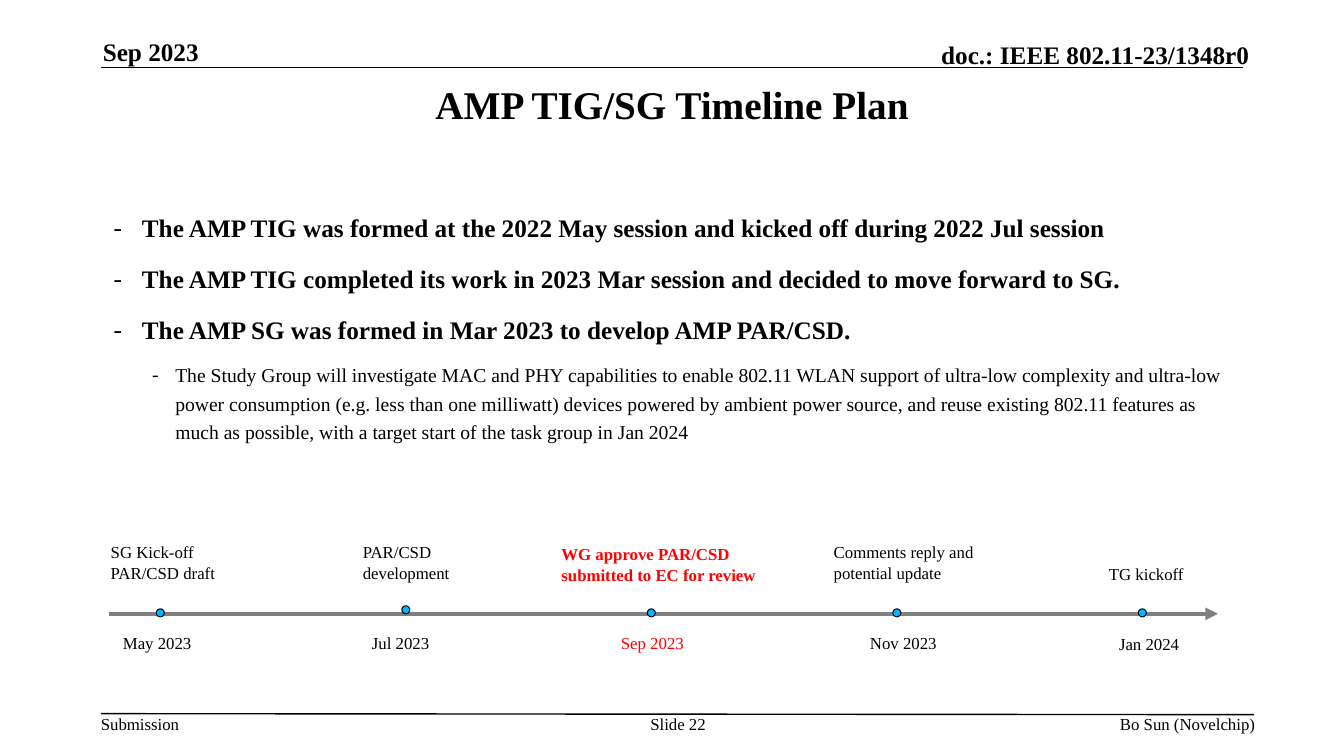
from dataclasses import dataclass

from lxml.etree import SubElement
from pptx import Presentation
from pptx.dml.color import RGBColor
from pptx.enum.shapes import MSO_CONNECTOR, MSO_SHAPE
from pptx.enum.text import MSO_ANCHOR, PP_ALIGN
from pptx.oxml.ns import qn
from pptx.text.text import _Paragraph
from pptx.util import Inches, Pt

FONT = "Times New Roman"
BLACK, RED, GREY, BLUE = "000000", "FF0000", "808080", "00B8FF"

Box = tuple[float, float, float, float]
Point = tuple[float, float]


@dataclass
class Milestone:
    date: str
    label: str
    label_box: Box
    date_top: float = 6.23
    dot_top: float = 6.04
    color: str = BLACK
    bold: bool = False


@dataclass
class Bullet:
    text: str
    level: int = 0


@dataclass
class BulletStyle:
    size: float
    bold: bool
    indent: float
    hanging: float
    space_before: float


MILESTONES = [
    Milestone("May 2023", "SG Kick-off\nPAR/CSD draft", (1, 5.33, 1.44, 0.5)),
    Milestone("Jul 2023", "PAR/CSD development", (3.5, 5.33, 1.08, 0.5), dot_top=6.01),
    Milestone("Sep 2023", "WG approve PAR/CSD submitted to EC for review",
              (5.47, 5.35, 2.18, 0.5), color=RED, bold=True),
    Milestone("Nov 2023", "Comments reply and potential update", (8.17, 5.33, 1.65, 0.5)),
    Milestone("Jan 2024", "TG kickoff", (10.9, 5.54, 1.08, 0.3), date_top=6.24),
]
FIRST_DATE, DATE_STEP = 1.12, 2.47
FIRST_DOT, DOT_STEP, DOT_SIZE = 1.55, 2.435, 0.08

BULLETS = [
    Bullet("The AMP TIG was formed at the 2022 May session and kicked off during 2022 Jul session"),
    Bullet("The AMP TIG completed its work in 2023 Mar session and decided to move forward to SG."),
    Bullet("The AMP SG was formed in Mar 2023 to develop AMP PAR/CSD."),
    Bullet("The Study Group will investigate MAC and PHY capabilities to enable 802.11 WLAN support of "
           "ultra-low complexity and ultra-low power consumption (e.g. less than one milliwatt) devices "
           "powered by ambient power source, and reuse existing 802.11 features as much as possible, "
           "with a target start of the task group in Jan 2024", level=1),
]
BULLET_STYLES = [
    BulletStyle(18, True, 0.31, 0.28, 4.5),
    BulletStyle(14, False, 0.64, 0.23, 3.8),
]

prs = Presentation()
prs.slide_width, prs.slide_height = Inches(13.33), Inches(7.5)
slide = prs.slides.add_slide(prs.slide_layouts[6])


def rgb(color: str) -> RGBColor:
    return RGBColor.from_string(color)


def add_run(paragraph: _Paragraph, text: str, size: float, bold: bool, color: str) -> None:
    run = paragraph.add_run()
    run.text = text
    font = run.font
    font.name, font.size, font.bold = FONT, Pt(size), bold
    font.color.rgb = rgb(color)


def add_text(text: str, box: Box, *, size: float = 12, bold: bool = False, color: str = BLACK,
             align: PP_ALIGN = PP_ALIGN.LEFT, anchor: MSO_ANCHOR = MSO_ANCHOR.TOP,
             inset: bool = True, wrap: bool = True) -> None:
    """Add a text box with one paragraph per line of text."""
    frame = slide.shapes.add_textbox(*map(Inches, box)).text_frame
    frame.word_wrap = wrap
    frame.vertical_anchor = anchor
    if not inset:
        frame.margin_left = frame.margin_top = frame.margin_right = frame.margin_bottom = 0
    for index, line in enumerate(text.split("\n")):
        paragraph = frame.add_paragraph() if index else frame.paragraphs[0]
        paragraph.alignment = align
        add_run(paragraph, line, size, bold, color)


def add_line(start: Point, end: Point, color: str = BLACK, width: float = 1,
             arrow: bool = False) -> None:
    line = slide.shapes.add_connector(MSO_CONNECTOR.STRAIGHT, *map(Inches, start + end))
    line.line.color.rgb = rgb(color)
    line.line.width = Pt(width)
    if arrow:
        SubElement(line.line._get_or_add_ln(), qn("a:tailEnd"), type="triangle")
    SubElement(line._element.spPr, qn("a:effectLst"))


def add_bullets(bullets: list[Bullet], box: Box) -> None:
    frame = slide.shapes.add_textbox(*map(Inches, box)).text_frame
    frame.word_wrap = True
    for index, bullet in enumerate(bullets):
        style = BULLET_STYLES[bullet.level]
        paragraph = frame.add_paragraph() if index else frame.paragraphs[0]
        paragraph.level = bullet.level
        paragraph.line_spacing = 1.2
        paragraph.space_before, paragraph.space_after = Pt(style.space_before), Pt(6)
        properties = paragraph._p.get_or_add_pPr()
        properties.set("marL", str(Inches(style.indent)))
        properties.set("indent", str(-Inches(style.hanging)))
        SubElement(SubElement(properties, qn("a:buClr")), qn("a:srgbClr"), val=BLACK)
        SubElement(properties, qn("a:buFont"), typeface=FONT)
        SubElement(properties, qn("a:buChar"), char="-")
        add_run(paragraph, bullet.text, style.size, style.bold, BLACK)


def add_dot(left: float, top: float) -> None:
    dot = slide.shapes.add_shape(MSO_SHAPE.OVAL, *map(Inches, (left, top, DOT_SIZE, DOT_SIZE)))
    dot.shadow.inherit = False
    dot.fill.solid()
    dot.fill.fore_color.rgb = rgb(BLUE)
    dot.line.color.rgb = rgb(BLACK)
    dot.line.width = Pt(0.75)


def add_header_and_footer() -> None:
    add_line((1, 0.67), (12.33, 0.67))
    add_text("Sep 2023", (1.02, 0.36, 2.73, 0.3), size=18, bold=True,
             anchor=MSO_ANCHOR.BOTTOM, inset=False)
    add_text("doc.: IEEE 802.11-23/1348r0", (7.29, 0.39, 5.1, 0.3), size=18, bold=True,
             align=PP_ALIGN.RIGHT, anchor=MSO_ANCHOR.BOTTOM, inset=False)
    add_line((1, 7.08), (12.44, 7.09))
    add_text("Submission", (1, 7.08, 0.78, 0.2), inset=False, wrap=False)
    add_text("Slide 22", (6.34, 7.08, 0.77, 0.4), align=PP_ALIGN.CENTER, inset=False)
    add_text("Bo Sun (Novelchip)", (7.81, 7.08, 4.64, 0.2), align=PP_ALIGN.RIGHT, inset=False)


def add_timeline() -> None:
    add_line((1.08, 6.09), (12.08, 6.09), GREY, 3, arrow=True)
    for index, stone in enumerate(MILESTONES):
        add_text(stone.label, stone.label_box, color=stone.color, bold=stone.bold)
        add_dot(FIRST_DOT + index * DOT_STEP, stone.dot_top)
        add_text(stone.date, (FIRST_DATE + index * DATE_STEP, stone.date_top, 1.08, 0.3),
                 color=stone.color)


def main() -> None:
    add_header_and_footer()
    add_text("AMP TIG/SG Timeline Plan", (1, 0.75, 11.33, 1.16), size=28, bold=True,
             align=PP_ALIGN.CENTER)
    add_bullets(BULLETS, (1, 2, 11.33, 3.25))
    add_timeline()
    prs.save("out.pptx")


if __name__ == "__main__":
    main()
